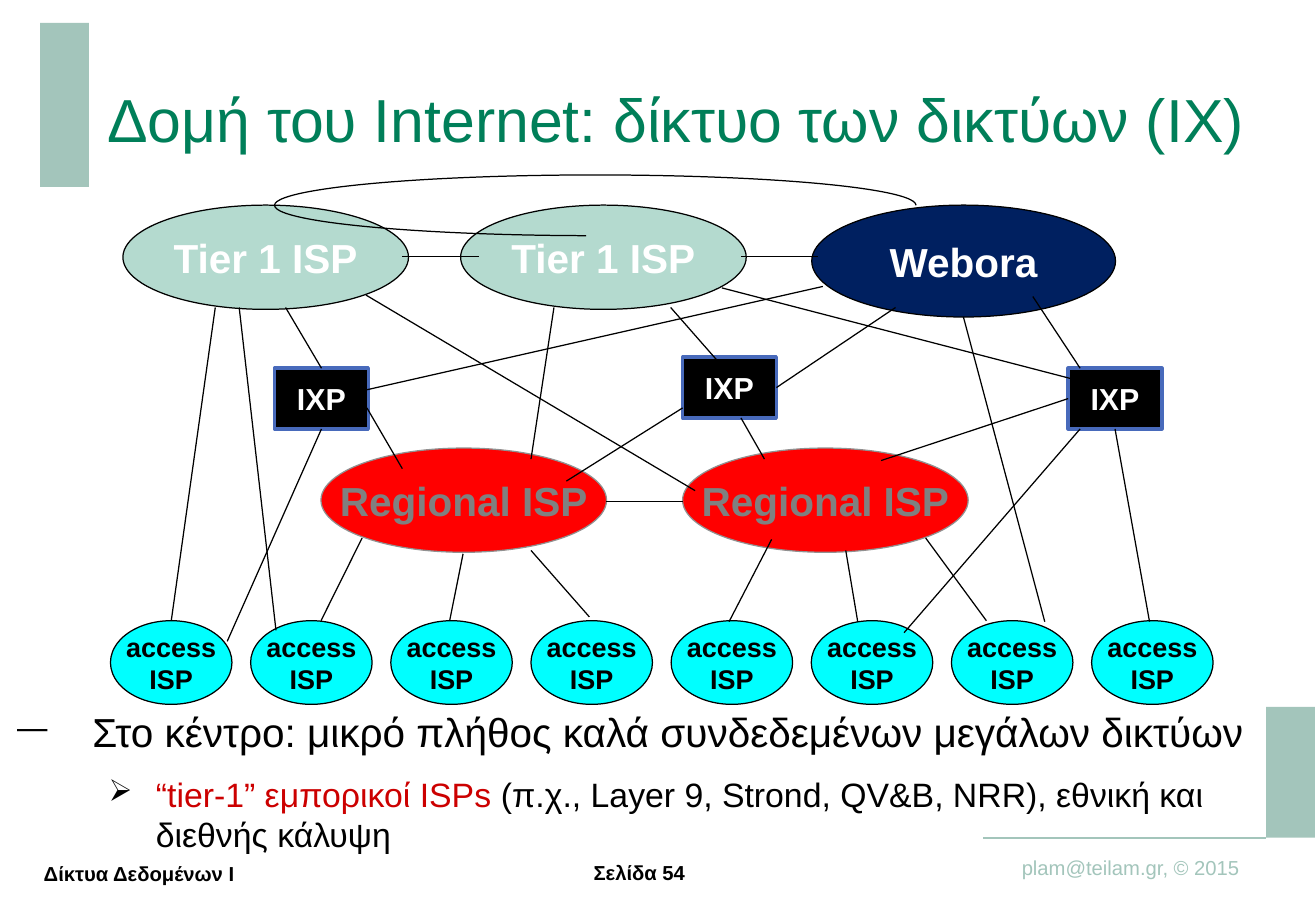
import pptx
import pptx.util
import pptx.dml.color
import pptx.enum.shapes
import pptx.enum.text
import pptx.oxml
import pptx.oxml.ns

Cm = pptx.util.Cm
Pt = pptx.util.Pt
Shapes = pptx.enum.shapes.MSO_SHAPE
Align = pptx.enum.text.PP_ALIGN
Anchor = pptx.enum.text.MSO_ANCHOR

TITLE = "Δομή του Internet: δίκτυο των δικτύων (IX)"
BULLETS = [
    {"mark": "—", "mark_size": 75, "left": 1.57, "hang": 1.57, "size": 24,
     "spans": [("Στο κέντρο: μικρό πλήθος καλά συνδεδεμένων μεγάλων δικτύων", "000000")]},
    {"mark": "➢", "mark_size": 90, "left": 2.9, "hang": 0.99, "size": 20,
     "spans": [("“tier-1” εμπορικοί ISPs ", "CC0000"),
               ("(π.χ., Layer 9, Strond, QV&B, NRR), εθνική και διεθνής κάλυψη", "000000")]},
]
FOOTERS = [
    ("Σελίδα 54", (12.07, 17.98, 2.59, 0.51), "000000", True, Align.CENTER),
    ("plam@teilam.gr, © 2015", (21.11, 17.75, 5.11, 0.76), "A3C5BB", False, Align.LEFT),
    ("Δίκτυα Δεδομένων Ι", (0.56, 17.53, 4.7, 1.47), "000000", True, Align.CENTER),
]
SIDE_BARS = [(0.84, 0.48, 1.02, 3.43), (26.47, 14.78, 1.02, 2.74)]

ACCESS_COUNT, ACCESS_LEFT, ACCESS_STEP = 8, 2.31, 2.93
PROVIDERS = [
    ("Regional ISP", (6.71, 9.37, 5.97, 2.18), "FF0000", "919191", "808080"),
    ("Regional ISP", (14.27, 9.37, 5.97, 2.18), "FF0000", "919191", "808080"),
    ("Tier 1 ISP", (2.57, 4.29, 5.97, 2.18), "B4DACF", "000000", "FFFFFF"),
    ("Tier 1 ISP", (9.63, 4.29, 5.97, 2.18), "B4DACF", "000000", "FFFFFF"),
    ("Webora", (16.97, 4.29, 6.35, 2.34), "002060", "000000", "FFFFFF"),
]
EXCHANGES = [(5.74, 7.7), (14.27, 7.47), (22.33, 7.7)]

PEERING_LINKS = [
    ((14.27, 10.49), (12.67, 10.49)), ((10.01, 5.36), (8.41, 5.36)),
    ((17.09, 5.36), (15.49, 5.36)),
]
ACCESS_LINKS = [
    ((4.5, 6.43), (3.58, 12.98)), ((5, 6.43), (5.77, 13.18)),
    ((7.57, 11.25), (6.71, 12.98)), ((9.68, 11.58), (9.4, 12.98)),
    ((11.1, 11.51), (12.32, 12.9)), ((16.13, 11.28), (15.24, 13)),
    ((17.68, 11.51), (17.93, 13)), ((19.35, 11.25), (20.62, 12.98)),
    ((20.14, 6.63), (21.84, 13)), ((22.58, 8.97), (18.9, 13.23)),
]
TRANSIT_LINKS = [
    ((21.59, 6.2), (22.58, 7.7)), ((7.67, 8.53), (8.41, 9.8)),
    ((17.2, 5.99), (7.67, 8.15)), ((14.02, 6.43), (15.24, 7.82)),
    ((11.58, 6.43), (11.1, 9.6)), ((15.49, 8.74), (15.98, 9.6)),
    ((14.27, 8.53), (11.84, 10.06)), ((7.65, 6.17), (14.53, 10.26)),
    ((15.09, 6.02), (22.4, 7.92)),
]
TOP, LEFT, BOTTOM, RIGHT = range(4)
EXCHANGE_LINKS = [
    ((4.75, 13.41), 0, BOTTOM), ((5.97, 6.43), 0, TOP), ((18.72, 6.43), 1, RIGHT),
    ((24.03, 13), 2, BOTTOM), ((18.42, 9.63), 2, LEFT),
]


def color(value):
    return pptx.dml.color.RGBColor.from_string(value)


def lengths(values):
    return [Cm(value) for value in values]


def style(para, size, tone, bold=False):
    for span in para.runs:
        span.font.name = "Arial"
        span.font.size = Pt(size)
        span.font.bold = bold
        span.font.color.rgb = color(tone)


def write(frame, text, size, tone, bold=False, align=Align.CENTER,
          anchor=Anchor.MIDDLE, wrap=False):
    frame.text = text
    frame.word_wrap = wrap
    frame.vertical_anchor = anchor
    for para in frame.paragraphs:
        para.alignment = align
        style(para, size, tone, bold)


def add_shape(page, kind, place, fill, line=None, width=0.75):
    shape = page.shapes.add_shape(kind, *lengths(place))
    shape.shadow.inherit = False
    if fill:
        shape.fill.solid()
        shape.fill.fore_color.rgb = color(fill)
    else:
        shape.fill.background()
    if line:
        shape.line.color.rgb = color(line)
        shape.line.width = Pt(width)
    else:
        shape.line.fill.background()
    return shape


def add_line(page, start, end, tone="000000", width=0.75):
    line = page.shapes.add_connector(
        pptx.enum.shapes.MSO_CONNECTOR.STRAIGHT, *lengths(start + end))
    line.line.color.rgb = color(tone)
    line.line.width = Pt(width)
    line._element.spPr.append(pptx.oxml.parse_xml(
        f'<a:effectLst {pptx.oxml.ns.nsdecls("a")}/>'))
    return line


def add_text_box(page, place, side_inset=0):
    box = page.shapes.add_textbox(*lengths(place))
    box.text_frame.margin_left = box.text_frame.margin_right = Cm(side_inset)
    return box.text_frame


def add_bullet(para, item):
    properties = para._p.get_or_add_pPr()
    properties.set("marL", str(Cm(item["left"])))
    properties.set("indent", str(-Cm(item["hang"])))
    space = pptx.oxml.ns.nsdecls("a")
    for markup in (
        f'<a:buClr {space}><a:srgbClr val="000000"/></a:buClr>',
        f'<a:buSzPct {space} val="{item["mark_size"] * 1000}"/>',
        f'<a:buChar {space} char="{item["mark"]}"/>',
    ):
        properties.append(pptx.oxml.parse_xml(markup))


def draw_frame(page):
    for place in SIDE_BARS:
        add_shape(page, Shapes.RECTANGLE, place, "A3C5BB")
    for text, place, tone, bold, align in FOOTERS:
        frame = add_text_box(page, place, 0.25)
        write(frame, text, 12, tone, bold, align)
    add_line(page, (20.55, 17.53), (26.47, 17.53), "A3C5BB", 1)


def draw_body(page):
    frame = add_text_box(page, (0.36, 14.73, 25.86, 4.01))
    frame.word_wrap = True
    for index, item in enumerate(BULLETS):
        para = frame.add_paragraph() if index else frame.paragraphs[0]
        add_bullet(para, item)
        para.level = index
        for text, tone in item["spans"]:
            para.add_run().text = text
            para.runs[-1].font.color.rgb = color(tone)
            para.runs[-1].font.size = Pt(item["size"])
            para.runs[-1].font.name = "Arial"
    frame.paragraphs[0].line_spacing = Pt(27)
    frame.paragraphs[0].space_after = Pt(4.5)
    frame.paragraphs[1].space_before = Pt(6)


def draw_network(page):
    for index in range(ACCESS_COUNT):
        place = (ACCESS_LEFT + index * ACCESS_STEP, 12.98, 2.54, 1.75)
        node = add_shape(page, Shapes.OVAL, place, "00FFFF", "000000")
        write(node.text_frame, "access\nISP", 16, "000000", True)
    for name, place, fill, line, tone in PROVIDERS:
        node = add_shape(page, Shapes.OVAL, place, fill, line)
        write(node.text_frame, name, 24, tone, True)
    exchanges = []
    for corner in EXCHANGES:
        node = add_shape(page, Shapes.RECTANGLE, corner + (1.96, 1.27), "000000", "486ABB", 2)
        write(node.text_frame, "IXP", 18, "FFFFFF", True, wrap=True)
        exchanges.append(node)
    for start, end in PEERING_LINKS + ACCESS_LINKS + TRANSIT_LINKS:
        add_line(page, start, end)
    for start, exchange, side in EXCHANGE_LINKS:
        add_line(page, start, start).end_connect(exchanges[exchange], side)
    arc = add_shape(page, Shapes.ARC, (5.74, 3.66, 13.41, 1.27), None, "000000")
    arc.adjustments[0] = 64.09
    arc.adjustments[1] = 0


def main():
    deck = pptx.Presentation()
    deck.slide_width, deck.slide_height = Cm(27.51), Cm(19.05)
    page = deck.slides.add_slide(deck.slide_layouts[6])
    draw_frame(page)
    draw_body(page)
    draw_network(page)
    title = add_text_box(page, (2.24, 0.86, 23.98, 2.49))
    write(title, TITLE, 36, "007F59", align=Align.LEFT, anchor=Anchor.BOTTOM, wrap=True)
    deck.save("out.pptx")


if __name__ == "__main__":
    main()
